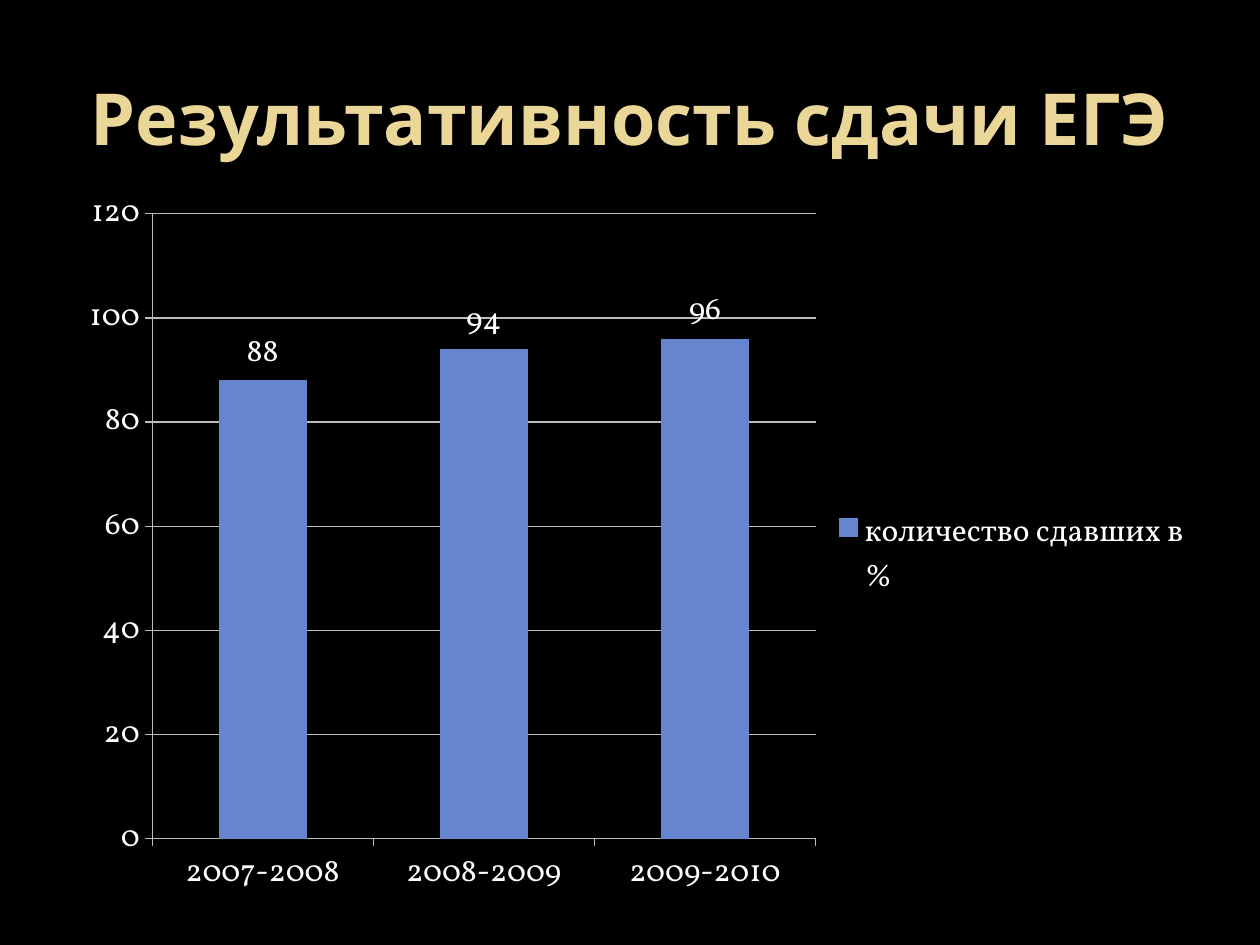
from lxml.etree import SubElement
from pptx import Presentation
from pptx.chart.data import CategoryChartData
from pptx.dml.color import RGBColor
from pptx.enum.chart import XL_CHART_TYPE, XL_LABEL_POSITION, XL_LEGEND_POSITION
from pptx.enum.chart import XL_TICK_LABEL_POSITION, XL_TICK_MARK
from pptx.enum.text import MSO_ANCHOR, PP_ALIGN
from pptx.oxml.ns import qn
from pptx.util import Inches, Pt


def paint(target, color):
    target.solid()
    target.fore_color.rgb = RGBColor.from_string(color)


def write(frame, text, size, font, color, bold=False, align=PP_ALIGN.CENTER):
    para = frame.paragraphs[0]
    para.alignment = align
    span = para.add_run()
    span.text = text
    span.font.size = Pt(size)
    span.font.name = font
    span.font.bold = bold
    paint(span.font.fill, color)


deck = Presentation()
deck.slide_width, deck.slide_height = Inches(10), Inches(7.5)
page = deck.slides.add_slide(deck.slide_layouts[5])
paint(page.background.fill, "000000")

# Title
title = page.shapes.title
title.left, title.top = Inches(0.5), Inches(0.3)
title.width, title.height = Inches(9), Inches(1.25)
title.text_frame.vertical_anchor = MSO_ANCHOR.MIDDLE
write(title.text_frame, "Результативность сдачи ЕГЭ", size=41,
      font="Noto Sans", color="EAD696", bold=True)

# Chart of exam results
results = CategoryChartData()
results.categories = ["2007-2008", "2008-2009", "2009-2010"]
results.add_series("количество сдавших в %", [88, 94, 96])
chart = page.shapes.add_chart(
    XL_CHART_TYPE.COLUMN_CLUSTERED, Inches(0.56), Inches(1.52),
    Inches(9), Inches(5.77), results).chart
chart.has_title = False
chart.font.size = Pt(18)
chart.font.name = "Vollkorn"
paint(chart.font.fill, "FFFFFF")

# Columns and their values
plot = chart.plots[0]
plot.gap_width = 150
plot.vary_by_categories = False
paint(plot.series[0].format.fill, "6585CF")
plot.has_data_labels = True
plot.data_labels.show_value = True
plot.data_labels.position = XL_LABEL_POSITION.OUTSIDE_END

# Axes
years, percent = chart.category_axis, chart.value_axis
years.tick_label_position = XL_TICK_LABEL_POSITION.LOW
percent.minimum_scale, percent.maximum_scale, percent.major_unit = 0, 120, 20
percent.has_major_gridlines = True
for axis in (years, percent):
    axis.major_tick_mark = XL_TICK_MARK.OUTSIDE
    axis.minor_tick_mark = XL_TICK_MARK.NONE
for line in (years.format.line, percent.format.line,
             percent.major_gridlines.format.line):
    line.width = Pt(0.75)
    paint(line.fill, "B9BEB8")

# Legend
chart.has_legend = True
chart.legend.position = XL_LEGEND_POSITION.RIGHT
chart.legend.include_in_layout = False

# Fixed place of the plot inside the chart
plot_area = chart.plots[0]._element.getparent()
for old_layout in plot_area.findall(qn("c:layout")):
    plot_area.remove(old_layout)
layout = SubElement(plot_area, qn("c:layout"))
plot_area.insert(0, layout)
manual = SubElement(layout, qn("c:manualLayout"))
for tag, value in [("layoutTarget", "inner"), ("xMode", "edge"), ("yMode", "edge"),
                   ("x", 0.072), ("y", 0.027), ("w", 0.585), ("h", 0.863)]:
    SubElement(manual, qn(f"c:{tag}")).set("val", str(value))

deck.save("out.pptx")
